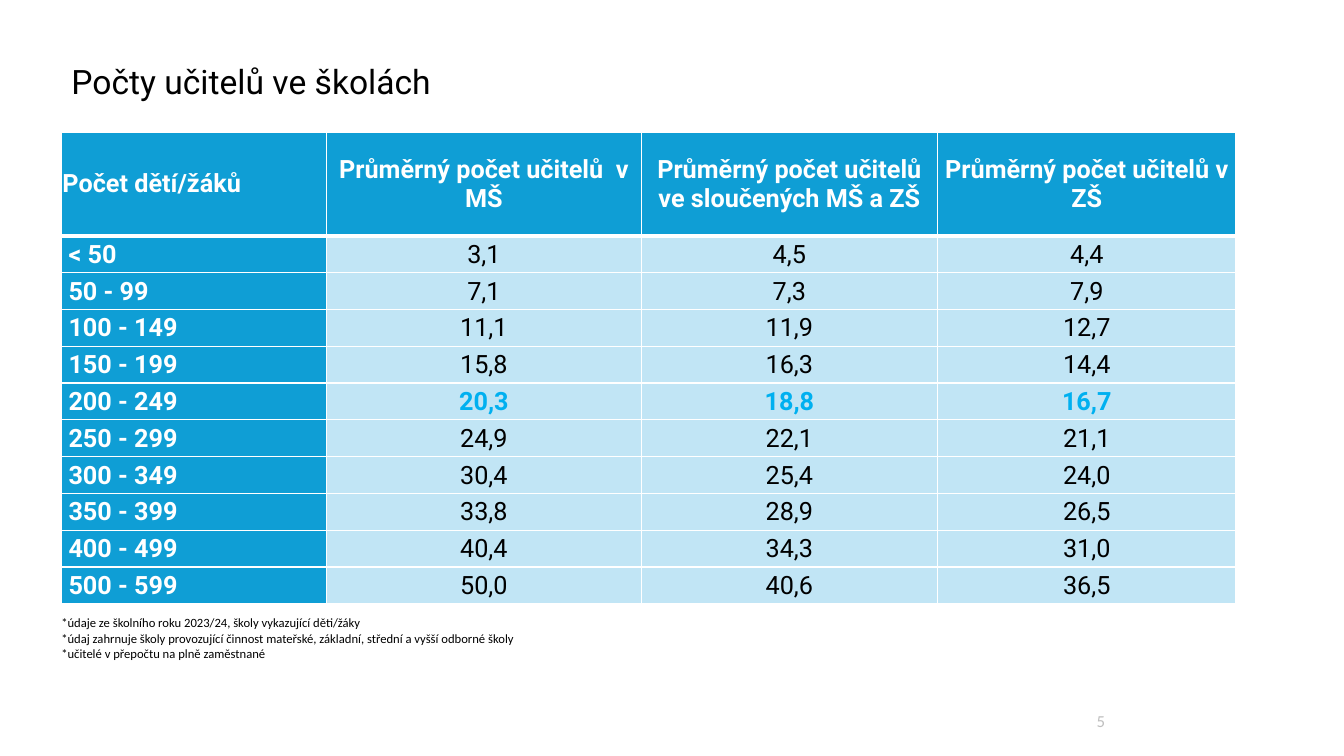
import pptx
import pptx.util
import pptx.dml.color
import pptx.enum.text
import pptx.oxml.ns
import lxml.etree

Inches = pptx.util.Inches
Align = pptx.enum.text.PP_ALIGN
Middle = pptx.enum.text.MSO_ANCHOR.MIDDLE


class Theme:
    black, white, grey = "000000", "FFFFFF", "BFBFBF"
    blue, pale, bright = "0F9ED5", "C1E5F5", "00B0F0"
    head, body = "Roboto", "Calibri"
    title, table, page, note = 24, 18, 12, 9


def style(frame, font, size, color, bold=False, align=Align.LEFT):
    for para in frame.paragraphs:
        para.alignment = align
        for run in para.runs:
            run.font.name = font
            run.font.size = pptx.util.Pt(size)
            run.font.bold = bold
            run.font.color.rgb = pptx.dml.color.RGBColor.from_string(color)


def add_text(slide, box, text, font, size, color, align=Align.LEFT):
    frame = slide.shapes.add_textbox(*map(Inches, box)).text_frame
    frame.word_wrap = True
    frame.vertical_anchor = Middle
    frame.text = text
    style(frame, font, size, color, align=align)
    return frame


deck = pptx.Presentation()
deck.slide_width, deck.slide_height = Inches(13.33), Inches(7.5)
slide = deck.slides.add_slide(deck.slide_layouts[6])

# Title
title = add_text(slide, (0.61, 0.49, 11.85, 0.68), "Počty učitelů ve školách",
                 Theme.head, Theme.title, Theme.black)
title.paragraphs[0].line_spacing = 0.9

# Page number
add_text(slide, (9.42, 6.95, 3, 0.4), "5", Theme.body, Theme.page,
         Theme.grey, Align.CENTER)

# Table data
rows = [
    ("Počet dětí/žáků", "Průměrný počet učitelů  v MŠ",
     "Průměrný počet učitelů ve sloučených MŠ a ZŠ", "Průměrný počet učitelů v ZŠ"),
    ("< 50", "3,1", "4,5", "4,4"),
    ("50 - 99", "7,1", "7,3", "7,9"),
    ("100 - 149", "11,1", "11,9", "12,7"),
    ("150 - 199", "15,8", "16,3", "14,4"),
    ("200 - 249", "20,3", "18,8", "16,7"),
    ("250 - 299", "24,9", "22,1", "21,1"),
    ("300 - 349", "30,4", "25,4", "24,0"),
    ("350 - 399", "33,8", "28,9", "26,5"),
    ("400 - 499", "40,4", "34,3", "31,0"),
    ("500 - 599", "50,0", "40,6", "36,5"),
]
marked = "200 - 249"
widths = [2.63, 3.12, 2.94, 2.96]

# Table grid
table = slide.shapes.add_table(len(rows), len(widths), Inches(0.61), Inches(1.31),
                               Inches(11.65), Inches(4.68)).table
for col, width in zip(table.columns, widths):
    col.width = Inches(width)
for r, row in enumerate(table.rows):
    row.height = Inches(0.365 if r else 1.03)

# Table cells
for r, row in enumerate(rows):
    for c, text in enumerate(row):
        cell = table.cell(r, c)
        label = r == 0 or c == 0
        bright = row[0] == marked and not label
        cell.margin_left = Inches(0.07 if r and c == 0 else 0.01)
        cell.margin_top = cell.margin_right = Inches(0.01)
        cell.margin_bottom = 0
        cell.vertical_anchor = Middle

        # White borders, thick under the header row
        props = cell._tc.get_or_add_tcPr()
        for side in "LRTB":
            thick = (r, side) in ((0, "B"), (1, "T"))
            line = lxml.etree.SubElement(props, pptx.oxml.ns.qn("a:ln" + side),
                                         w=str(pptx.util.Pt(3 if thick else 1)))
            fill = lxml.etree.SubElement(line, pptx.oxml.ns.qn("a:solidFill"))
            lxml.etree.SubElement(fill, pptx.oxml.ns.qn("a:srgbClr"), val=Theme.white)

        cell.fill.solid()
        cell.fill.fore_color.rgb = pptx.dml.color.RGBColor.from_string(
            Theme.blue if label else Theme.pale)
        cell.text_frame.text = text
        color = Theme.white if label else Theme.bright if bright else Theme.black
        style(cell.text_frame, Theme.head, Theme.table, color, label or bright,
              Align.CENTER if c else Align.LEFT)

# Footnotes
notes = [
    "*údaje ze školního roku 2023/24, školy vykazující děti/žáky",
    "*údaj zahrnuje školy provozující činnost mateřské, základní, střední a vyšší odborné školy",
    "*učitelé v přepočtu na plně zaměstnané",
]
add_text(slide, (0.51, 5.99, 6.86, 0.68), "\n".join(notes), Theme.body,
         Theme.note, Theme.black)

deck.save("out.pptx")
